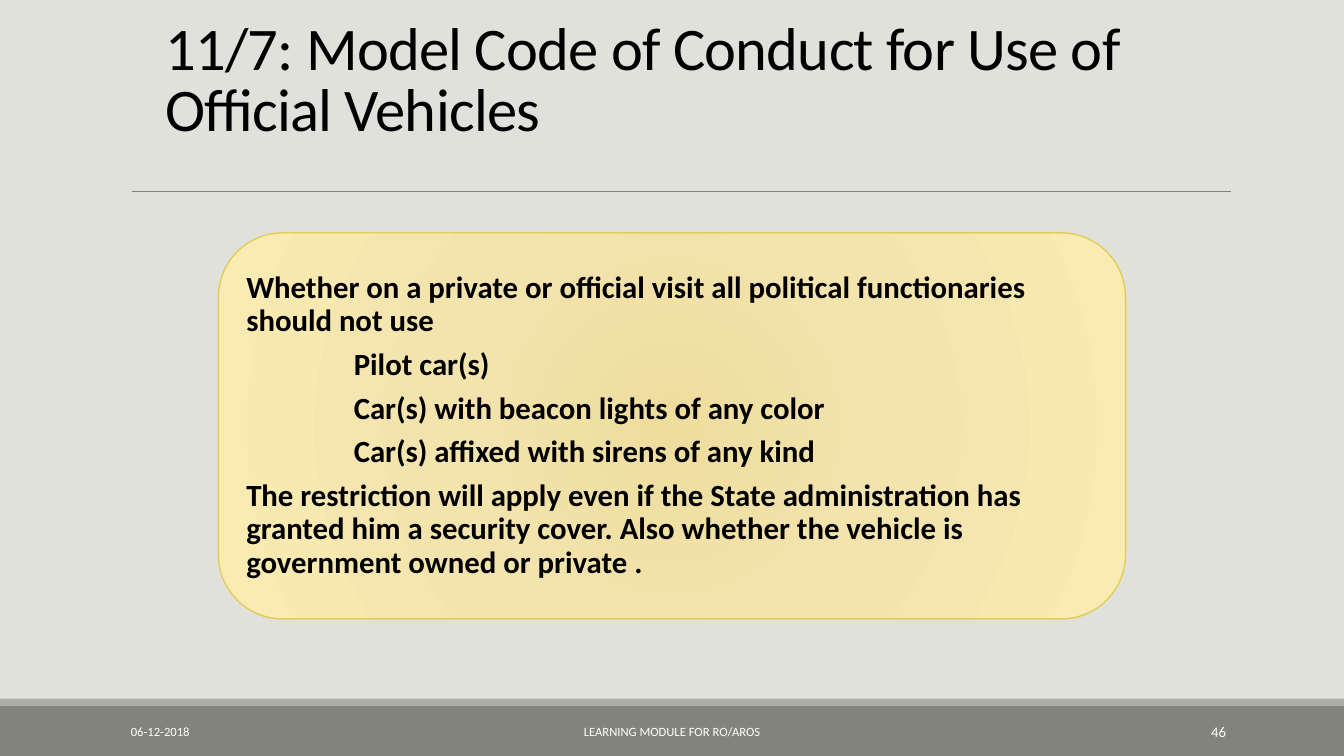
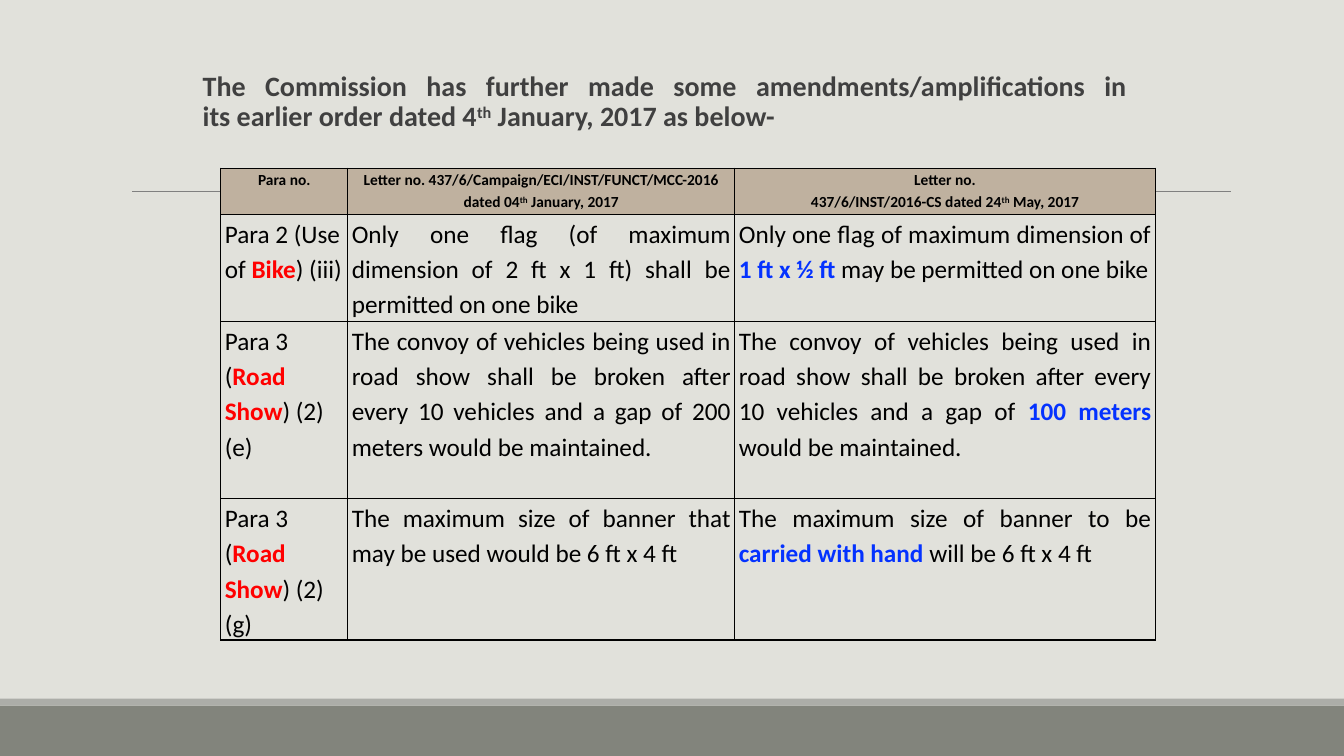
from dataclasses import dataclass

from lxml import etree
from pptx import Presentation
from pptx.dml.color import RGBColor
from pptx.enum.shapes import MSO_CONNECTOR, MSO_SHAPE
from pptx.enum.text import MSO_ANCHOR, PP_ALIGN
from pptx.oxml import parse_xml
from pptx.oxml.ns import nsdecls, qn
from pptx.util import Inches, Pt

LEFT, CENTER, RIGHT, JUSTIFY = PP_ALIGN.LEFT, PP_ALIGN.CENTER, PP_ALIGN.RIGHT, PP_ALIGN.JUSTIFY
TOP, MIDDLE, BOTTOM = MSO_ANCHOR.TOP, MSO_ANCHOR.MIDDLE, MSO_ANCHOR.BOTTOM
RECTANGLE, ROUNDED = MSO_SHAPE.RECTANGLE, MSO_SHAPE.ROUNDED_RECTANGLE
STRAIGHT = MSO_CONNECTOR.STRAIGHT
NBSP = chr(160)
MARGINS = ("margin_left", "margin_top", "margin_right", "margin_bottom")


@dataclass(frozen=True)
class Theme:
    font: str = "Calibri"
    page: str = "E1E1DB"
    band: str = "82847C"
    strip: str = "ACADA8"
    rule: str = "808080"
    ink: str = "000000"
    lead_ink: str = "404040"
    footer_ink: str = "FFFFFF"
    subject: str = "FF0000"
    change: str = "0432FF"
    header: str = "BFB19F"
    card_edge: str = "E3CC5A"
    card_stops: tuple = ((0, "EEDD9D"), (45, "F3E4AE"), (100, "FAEBB2"))
    title_size: float = 43.2
    card_size: float = 22
    lead_size: float = 20
    cell_size: float = 18
    header_size: float = 11
    footer_size: float = 9
    number_size: float = 10.5


class Deck:
    """Builds slides in one style, with lengths in percent of the slide."""

    def __init__(self, theme):
        self.theme = theme
        self.deck = Presentation()
        self.deck.slide_width, self.deck.slide_height = Inches(13.33), Inches(7.5)
        self.slide = None

    def x(self, share):
        return round(self.deck.slide_width * share / 100)

    def y(self, share):
        return round(self.deck.slide_height * share / 100)

    def box(self, left, top, width, height):
        return self.x(left), self.y(top), self.x(width), self.y(height)

    def apply(self, target, formats):
        for name, value in formats.items():
            setattr(target, name, value)

    def new_slide(self):
        self.slide = self.deck.slides.add_slide(self.deck.slide_layouts[6])
        fill = self.slide.background.fill
        fill.solid()
        fill.fore_color.rgb = RGBColor.from_string(self.theme.page)
        self.bar((0, 93.33, 100, 6.67), self.theme.band)
        self.bar((0, 92.4, 100, 0.93), self.theme.strip)
        self.rule(9.83, 91.6, 25.33)

    def shape(self, kind, place):
        shape = self.slide.shapes.add_shape(kind, *self.box(*place))
        shape.shadow.inherit = False
        return shape

    def bar(self, place, color):
        bar = self.shape(RECTANGLE, place)
        bar.fill.solid()
        bar.fill.fore_color.rgb = RGBColor.from_string(color)
        bar.line.fill.background()

    def rule(self, start, end, level):
        rule = self.slide.shapes.add_connector(
            STRAIGHT, self.x(start), self.y(level), self.x(end), self.y(level))
        rule.line.color.rgb = RGBColor.from_string(self.theme.rule)
        rule.line.width = Pt(0.5)
        etree.SubElement(rule._element.spPr, qn("a:effectLst"))

    def set_text(self, frame, paragraphs, size, color=None, bold=False, spacing=None, **layout):
        for number, pieces in enumerate(paragraphs):
            paragraph = frame.paragraphs[0] if number == 0 else frame.add_paragraph()
            self.apply(paragraph, layout)
            for piece in [pieces] if isinstance(pieces, str) else pieces:
                words, accent = (piece, None) if isinstance(piece, str) else piece
                raised = accent == "raised"
                marked = accent if not raised else None
                run = paragraph.add_run()
                run.text = words
                self.apply(run.font, {"name": self.theme.font, "size": Pt(size),
                                      "bold": bold or bool(marked)})
                run.font.color.rgb = RGBColor.from_string(marked or color or self.theme.ink)
                extras = {"baseline": "30000" if raised else None, "spc": spacing}
                for name, value in extras.items():
                    if value:
                        run._r.get_or_add_rPr().set(name, value)

    def text(self, place, paragraphs, size, anchor=TOP, margins=None, **style):
        frame = self.slide.shapes.add_textbox(*self.box(*place)).text_frame
        self.apply(frame, {"word_wrap": True, "vertical_anchor": anchor})
        if margins:
            self.apply(frame, dict(zip(MARGINS, map(Inches, margins))))
        self.set_text(frame, paragraphs, size, **style)

    def title(self, words):
        self.text((11.55, 3.07, 75, 16.67), [words], self.theme.title_size,
                  anchor=BOTTOM, spacing="-50", line_spacing=0.85)

    def footer(self, date, module, number):
        small = self.theme.footer_size
        for left, width, words, size, alignment in (
                (9, 20.25, date, small, LEFT),
                (30.25, 39.5, module, small, CENTER),
                (81.25, 10.7, number, self.theme.number_size, RIGHT)):
            self.text((left, 94.13, width, 5.33), [words], size, anchor=MIDDLE,
                      color=self.theme.footer_ink, alignment=alignment)

    def card(self, place, paragraphs, indented):
        card = self.shape(ROUNDED, place)
        stops = "".join(f'<a:gs pos="{at * 1000}"><a:srgbClr val="{color}"/></a:gs>'
                        for at, color in self.theme.card_stops)
        card.fill.background()
        properties = card._element.spPr
        properties.replace(properties.find(qn("a:noFill")), parse_xml(
            f'<a:gradFill {nsdecls("a")}><a:gsLst>{stops}</a:gsLst><a:path path="circle">'
            '<a:fillToRect l="50000" t="50000" r="50000" b="50000"/></a:path></a:gradFill>'))
        card.line.color.rgb = RGBColor.from_string(self.theme.card_edge)
        card.line.width = Pt(1)
        frame = card.text_frame
        self.apply(frame, {"word_wrap": True, "vertical_anchor": MIDDLE,
                           **dict.fromkeys(MARGINS, Inches(0.09))})
        self.set_text(frame, paragraphs, self.theme.card_size, bold=True,
                      alignment=LEFT, line_spacing=0.9, space_after=Pt(7.5))
        for number in indented:
            frame.paragraphs[number]._p.get_or_add_pPr().set("marL", str(self.x(8)))

    def border(self, cell):
        properties = cell._tc.get_or_add_tcPr()
        for position, side in enumerate("LRTB"):
            properties.insert(position, parse_xml(
                f'<a:ln{side} {nsdecls("a")} w="12700"><a:solidFill>'
                f'<a:srgbClr val="{self.theme.ink}"/></a:solidFill></a:ln{side}>'))

    def table(self, left, top, widths, heights, rows):
        table = self.slide.shapes.add_table(
            len(rows), len(widths), *self.box(left, top, sum(widths), sum(heights))).table
        self.apply(table, {"first_row": False, "horz_banding": False})
        for column, width in zip(table.columns, widths):
            column.width = self.x(width)
        for row, height in zip(table.rows, heights):
            row.height = self.y(height)
        for row_number, row in enumerate(rows):
            heading = row_number == 0
            for column_number, paragraphs in enumerate(row):
                cell = table.cell(row_number, column_number)
                self.apply(cell, dict(zip(MARGINS, map(Inches, (0.04, 0, 0.04, 0)))))
                if heading:
                    cell.fill.solid()
                    cell.fill.fore_color.rgb = RGBColor.from_string(self.theme.header)
                else:
                    cell.fill.background()
                self.border(cell)
                body_alignment = JUSTIFY if column_number else LEFT
                self.set_text(cell.text_frame, paragraphs,
                              self.theme.header_size if heading else self.theme.cell_size,
                              bold=heading, line_spacing=1.15,
                              alignment=CENTER if heading else body_alignment)


def vehicles_slide(deck):
    deck.new_slide()
    deck.title("11/7: Model Code of Conduct for Use of Official Vehicles")
    deck.card((16.25, 30.8, 67.5, 51.07), [
        "Whether on a private or official visit all political functionaries should not use",
        "Pilot car(s)",
        "Car(s) with beacon lights of any color",
        "Car(s) affixed with sirens of any kind",
        "The restriction will apply even if the State administration has granted him a "
        "security cover. Also whether the vehicle is government owned or private .",
    ], indented=(1, 2, 3))
    deck.footer("06-12-2018", "LEARNING MODULE FOR RO/AROS", "46")


def amendments_slide(deck):
    theme = deck.theme
    ordinal = ("th", "raised")
    road_show = ("Road Show", theme.subject)
    deck.new_slide()
    deck.text((15.08, 8.93, 68.77, 10), [[
        "The Commission has further made some amendments/amplifications in "
        f"its{NBSP}earlier order dated 4", ordinal, " January, 2017 as below-"]],
        theme.lead_size, margins=(0, 0.05, 0, 0.05), color=theme.lead_ink, bold=True,
        alignment=JUSTIFY, line_spacing=0.9)
    deck.table(16.43, 22.27, (9.45, 28.8, 31.28), (6.13, 14.13, 23.47, 18.67), [
        [["Para no."],
         [["Letter no. 437/6/Campaign/ECI/INST/FUNCT/MCC-2016 dated 04", ordinal,
           " January, 2017"]],
         ["Letter no.", ["437/6/INST/2016-CS dated 24", ordinal, " May, 2017"]]],
        [[["Para 2 (Use of ", ("Bike", theme.subject), ") (iii)"]],
         ["Only one flag (of maximum dimension of 2 ft x 1 ft) shall be permitted on one bike"],
         [["Only one flag of maximum dimension of ", ("1 ft x ½ ft ", theme.change),
           "may be permitted on one bike"]]],
        [[["Para 3 (", road_show, ") (2) (e)"]],
         ["The convoy of vehicles being used in road show shall be broken after every "
          "10 vehicles and a gap of 200 meters would be maintained."],
         [["The convoy of vehicles being used in road show shall be broken after every "
           "10 vehicles and a gap of ", ("100 meters ", theme.change),
           "would be maintained."]]],
        [[["Para 3 (", road_show, ") (2) (g)"]],
         ["The maximum size of banner that may be used would be 6 ft x 4 ft"],
         [["The maximum size of banner to be ", ("carried with hand ", theme.change),
           "will be 6 ft x 4 ft"]]],
    ])


def main():
    deck = Deck(Theme())
    vehicles_slide(deck)
    amendments_slide(deck)
    deck.deck.save("out.pptx")


if __name__ == "__main__":
    main()
